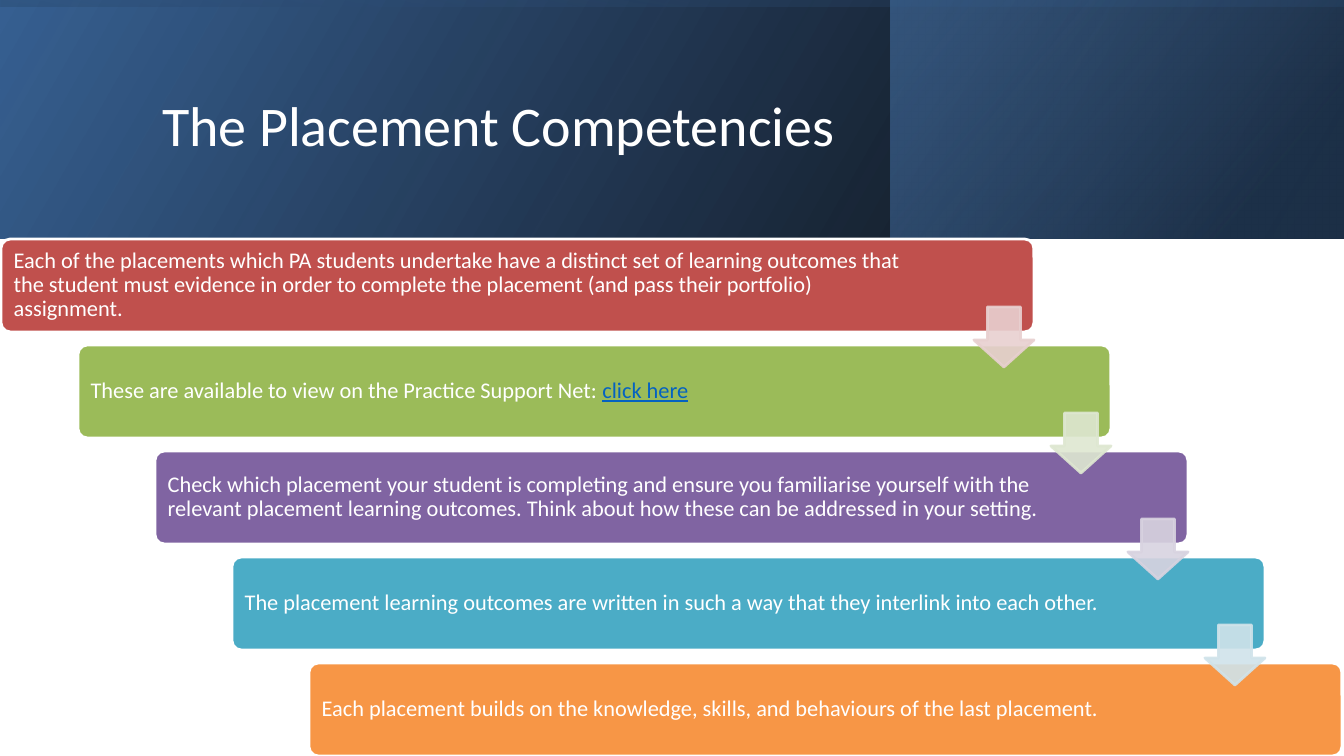
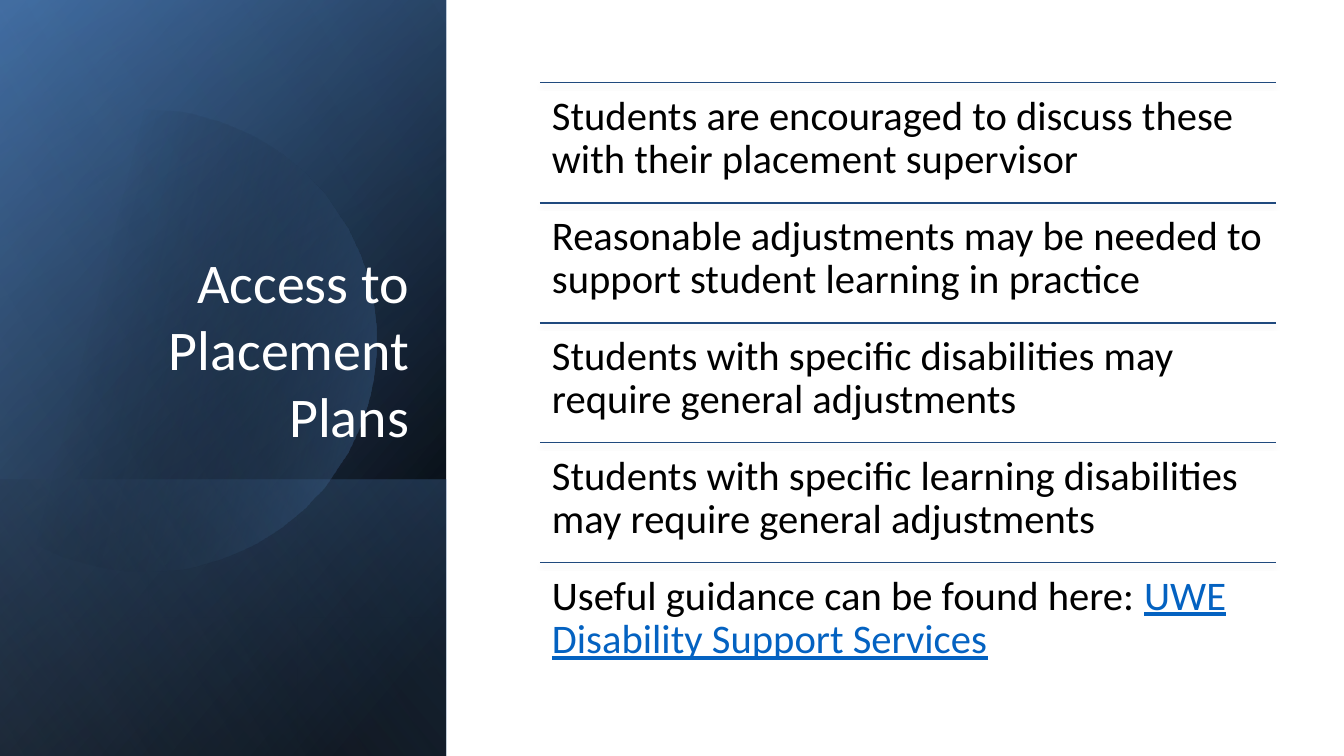
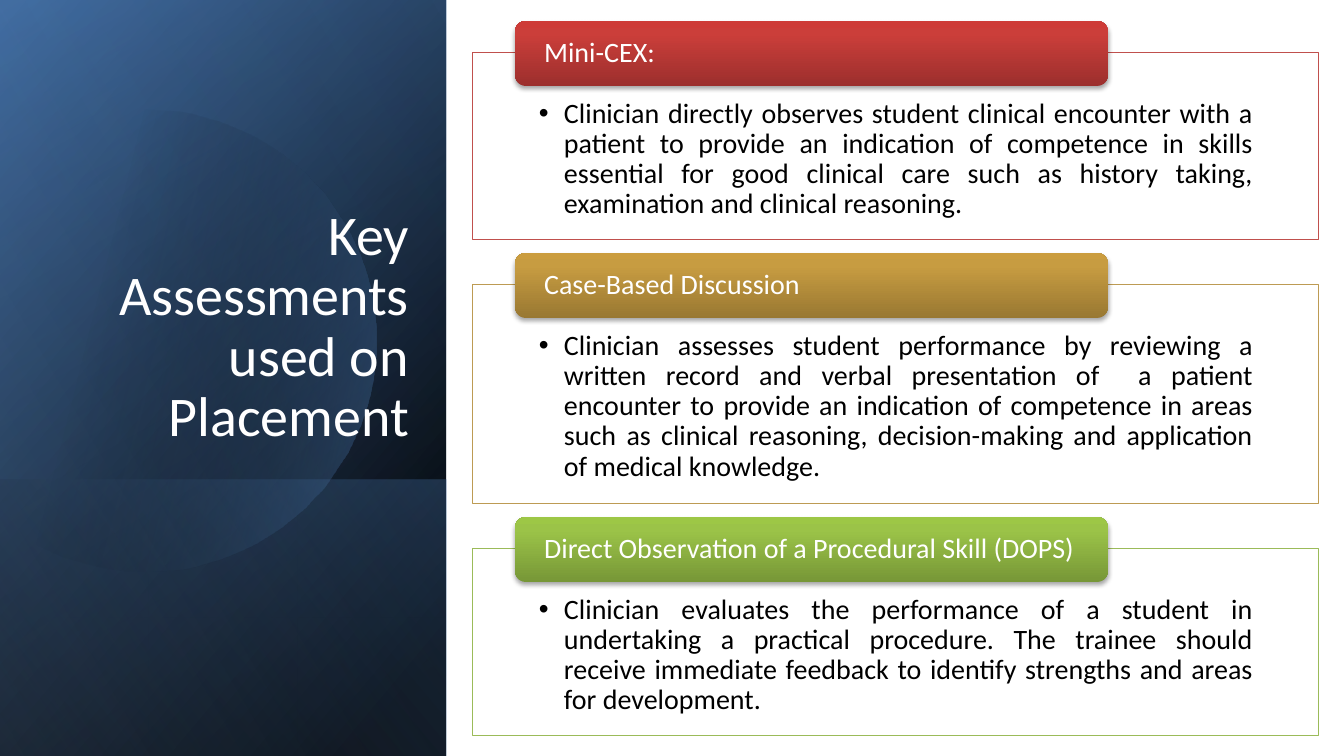
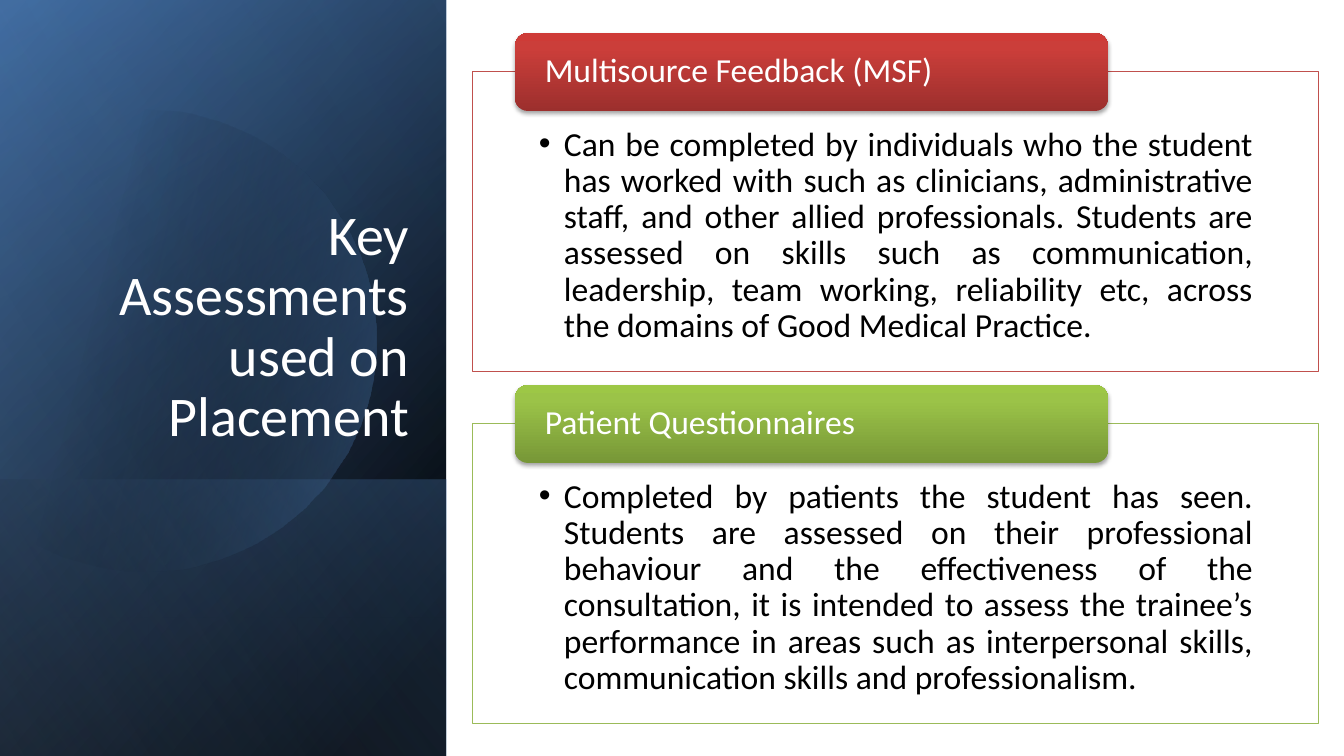
from math import acos, cos, pi, sin

from lxml.etree import SubElement
from pptx import Presentation
from pptx.dml.color import RGBColor
from pptx.enum.shapes import MSO_CONNECTOR, MSO_SHAPE as SHAPE
from pptx.enum.text import MSO_ANCHOR as ANCHOR, MSO_AUTO_SIZE, PP_ALIGN as ALIGN
from pptx.oxml import parse_xml
from pptx.oxml.ns import nsdecls, qn
from pptx.util import Pt

PX = 914400 / 100.8
WIDTH, HEIGHT = 1344, 756
BANNER_HEIGHT = 239
SIDE_WIDTH = 446
FONT = "Calibri"
COLOURS = {
    "white": "FFFFFF", "black": "000000", "navy": "254061", "deep": "376092",
    "blue": "4F81BD", "pale": "95B3D7", "rule": "1F497D", "link": "0462C1",
    "red": "C0504D", "green": "9BBB59", "purple": "8064A2", "teal": "4BACC6",
    "orange": "F79646", "gold": "BD9B53",
    "red tint": "E8D0D0", "green tint": "DEE7D1",
    "purple tint": "D8D3E0", "teal tint": "D0E3EA",
    "red low": "9C2F2D", "red mid": "CB3E3A", "red high": "CE3B37",
    "gold low": "997832", "gold mid": "C79C41", "gold high": "CB9D3F",
    "green low": "779737", "green mid": "9BC348", "green high": "9DC746",
}


def px(length):
    return round(length * PX)


def rgb(name):
    return RGBColor.from_string(COLOURS[name])


class Deck:
    """Holds the shared style and the slide being built."""

    def __init__(self):
        self.prs = Presentation()
        self.prs.slide_width, self.prs.slide_height = px(WIDTH), px(HEIGHT)
        self.slide = None

    def new_slide(self):
        self.slide = self.prs.slides.add_slide(self.prs.slide_layouts[5])

    def title(self, wording, box, anchor, align, margin=None, spacing=1.0):
        title = self.slide.shapes.title
        self.slide.shapes.element.append(title.element)  # in front of the panels
        title.left, title.top, title.width, title.height = map(px, box)
        title.text_frame.auto_size = MSO_AUTO_SIZE.NONE
        self.text(title, [(wording, "white")], 40, margin, anchor, align, spacing)

    def text(self, holder, parts, size, margins=None, anchor=ANCHOR.MIDDLE,
             align=ALIGN.LEFT, spacing=0.9, bullet=False):
        """Write one paragraph of (wording, colour) parts; margins run left, top, right, bottom."""
        frame = holder.text_frame
        frame.word_wrap, frame.vertical_anchor = True, anchor
        if margins:
            (frame.margin_left, frame.margin_top,
             frame.margin_right, frame.margin_bottom) = map(px, margins)
        paragraph = frame.paragraphs[0]
        paragraph.alignment, paragraph.line_spacing = align, spacing
        if bullet:
            props = paragraph._p.get_or_add_pPr()
            props.set("marL", str(px(25)))
            props.set("indent", str(-px(25)))
            SubElement(props, qn("a:buFont"), typeface="Arial")
            SubElement(props, qn("a:buChar"), char="•")
        for wording, colour in parts:
            run = paragraph.add_run()
            run.text = wording
            run.font.name, run.font.size = FONT, Pt(size)
            run.font.color.rgb = rgb(colour)
            if colour == "link":
                run.font.underline = True

    def shape(self, kind, box, fill=None, line=None, weight=0.75, opacity=100, adjust=()):
        shape = self.slide.shapes.add_shape(kind, *map(px, box))
        shape.shadow.inherit = False
        for index, value in enumerate(adjust):
            shape.adjustments[index] = value
        if fill:
            shape.fill.solid()
            shape.fill.fore_color.rgb = rgb(fill)
            colour = shape.element.spPr.find(qn("a:solidFill")).find(qn("a:srgbClr"))
            SubElement(colour, qn("a:alpha"), val=str(opacity * 1000))
        if line:
            shape.line.color.rgb = rgb(line)
            shape.line.width = Pt(weight)
        else:
            shape.line.fill.background()
        return shape

    def gradient(self, shape, angle, stops):
        """Fill with (position, colour, opacity) stops, all in percent."""
        marks = "".join(
            f'<a:gs pos="{place * 1000}"><a:srgbClr val="{COLOURS[colour]}">'
            f'<a:alpha val="{opacity * 1000}"/></a:srgbClr></a:gs>'
            for place, colour, opacity in stops)
        shape.fill.background()
        props = shape.element.spPr
        props.replace(props.find(qn("a:noFill")), parse_xml(
            f'<a:gradFill {nsdecls("a")} rotWithShape="1"><a:gsLst>{marks}</a:gsLst>'
            f'<a:lin ang="{angle * 60000}" scaled="0"/></a:gradFill>'))

    def drop_shadow(self, item):
        props = item.element.spPr
        effects = props.find(qn("a:effectLst"))
        if effects is None:
            effects = SubElement(props, qn("a:effectLst"))
        shadow = SubElement(effects, qn("a:outerShdw"), blurRad=str(Pt(3.1)),
                            dist=str(Pt(1.8)), dir="5400000", rotWithShape="0")
        black = SubElement(shadow, qn("a:srgbClr"), val=COLOURS["black"])
        SubElement(black, qn("a:alpha"), val="35000")

    def panel(self, box, turn, angle, *stops):
        """Mirrored gradient panel that covers box once it has been turned."""
        left, top, width, height = box
        if turn:
            left, top = left + (width - height) / 2, top + (height - width) / 2
            width, height = height, width
        panel = self.shape(SHAPE.RECTANGLE, (left, top, width, height))
        panel.rotation = turn
        panel.element.spPr.find(qn("a:xfrm")).set("flipH", "1")
        self.gradient(panel, angle, stops)

    def disc(self, centre_x, centre_y, radius):
        """Circle cut off at the left edge of the slide."""
        reach = acos(-centre_x / radius)
        steps = 72
        angles = [reach * (2 * step / steps - 1) for step in range(steps + 1)]
        points = [(round(centre_x + radius * cos(a)), round(centre_y + radius * sin(a)))
                  for a in angles]
        outline = self.slide.shapes.build_freeform(*points[0], scale=PX)
        outline.add_line_segments(points[1:], close=True)
        disc = outline.convert_to_shape()
        disc.shadow.inherit = False
        disc.line.fill.background()
        self.gradient(disc, 14, [(29, "black", 0), (100, "blue", 43)])

    def banner_slide(self, wording):
        self.new_slide()
        full = (0, 0, WIDTH, BANNER_HEIGHT)
        self.panel(full, 0, 330, (0, "black", 96), (100, "deep", 100))
        self.panel((891, 0, 452, BANNER_HEIGHT), 0, 320, (19, "navy", 68), (100, "blue", 48))
        self.panel(full, 270, 350, (23, "deep", 16), (99, "black", 45))
        self.title(wording, (152, 38, 1072, 173), ANCHOR.MIDDLE, ALIGN.LEFT)

    def side_slide(self, wording, spacing=0.9):
        self.new_slide()
        full = (0, 0, SIDE_WIDTH, HEIGHT)
        self.panel(full, 90, 50, (8, "black", 100), (100, "deep", 100))
        self.panel(full, 90, 30, (0, "black", 0), (99, "blue", 46))
        self.panel((0, 480, SIDE_WIDTH, 276), 90, 130, (2, "blue", 29), (100, "black", 30))
        self.disc(145, 341, 231)
        self.panel(full, 90, 120, (0, "black", 0), (99, "pale", 11))
        self.title(wording, (65, 185, 344, 264), ANCHOR.BOTTOM, ALIGN.RIGHT,
                   (0, 0, 0, 0), spacing)

    def staircase(self, steps):
        """Bars that step down to the right, with an arrow from each to the next."""
        right, down = 77, 106
        for index, (colour, parts) in enumerate(steps):
            bar = self.shape(SHAPE.ROUNDED_RECTANGLE,
                             (1 + index * right, 239 + index * down, 1033, 93),
                             colour, "white", 2, adjust=[0.1])
            self.text(bar, parts, 16, (10, 7, 120, 7))
        for index, (colour, _) in enumerate(steps[:-1]):
            tint = f"{colour} tint"
            arrow = self.shape(SHAPE.DOWN_ARROW,
                               (974 + index * right, 307 + index * down, 60, 60),
                               tint, tint, 2, 90, [0.55, 0.45])
            edge = arrow.line.fill.fore_color  # solid line colour, made see-through below
            edge.rgb = rgb(tint)
            outline = arrow.element.spPr.find(qn("a:ln"))
            SubElement(next(outline.iter(qn("a:srgbClr"))), qn("a:alpha"), val="90000")

    def ruled_list(self, rows):
        left, width, pitch = 540, 736, 120
        for index, parts in enumerate(rows):
            top = 83 + index * pitch
            rule = self.slide.shapes.add_connector(
                MSO_CONNECTOR.STRAIGHT, *map(px, (left, top, left + width, top)))
            rule.line.color.rgb = rgb("rule")
            rule.line.width = Pt(0.75)
            self.drop_shadow(rule)
            row = self.slide.shapes.add_textbox(*map(px, (left, top, width, pitch)))
            self.text(row, parts, 29, (12, 12, 12, 12), ANCHOR.TOP)

    def cards(self, top, gap, tab_height, size, entries):
        """Stack of outlined cards, each with a heading tab centred on its top edge."""
        for colour, tone, height, heading, body in entries:
            card = self.shape(SHAPE.RECTANGLE, (473, top, 846, height),
                              "white", colour, opacity=90)
            self.text(card, [(body, "black")], size, (66, round(tab_height * 0.71), 66, 16),
                      ANCHOR.TOP, ALIGN.JUSTIFY, bullet=True)
            tab = self.shape(SHAPE.ROUNDED_RECTANGLE,
                             (515, top - tab_height // 2, 593, tab_height))
            self.gradient(tab, 270, [(0, f"{tone} low", 100), (80, f"{tone} mid", 100),
                                     (100, f"{tone} high", 100)])
            self.drop_shadow(tab)
            self.text(tab, [(heading, "white")], size, (26, 0, 26, 0))
            top += height + gap


def main():
    deck = Deck()

    deck.banner_slide("The Placement Competencies")
    deck.staircase([
        ("red", [("Each of the placements which PA students undertake have a distinct set of "
                  "learning outcomes that the student must evidence in order to complete the "
                  "placement (and pass their portfolio) assignment.", "white")]),
        ("green", [("These are available to view on the Practice Support Net: ", "white"),
                   ("click here", "link")]),
        ("purple", [("Check which placement your student is completing and ensure you "
                     "familiarise yourself with the relevant placement learning outcomes. "
                     "Think about how these can be addressed in your setting.", "white")]),
        ("teal", [("The placement learning outcomes are written in such a way that they "
                   "interlink into each other.", "white")]),
        ("orange", [("Each placement builds on the knowledge, skills, and behaviours of the "
                     "last placement.", "white")]),
    ])

    deck.side_slide("Access to Placement Plans", spacing=1.0)
    deck.ruled_list([
        [("Students are encouraged to discuss these with their placement supervisor", "black")],
        [("Reasonable adjustments may be needed to support student learning in practice",
          "black")],
        [("Students with specific disabilities may require general adjustments", "black")],
        [("Students with specific learning disabilities may require general adjustments",
          "black")],
        [("Useful guidance can be found here: ", "black"),
         ("UWE Disability Support Services", "link")],
    ])

    assessments = "Key Assessments used on Placement"
    deck.side_slide(assessments)
    deck.cards(53, 45, 65, 20, [
        ("red", "red", 187, "Mini-CEX:",
         "Clinician directly observes student clinical encounter with a patient to provide an "
         "indication of competence in skills essential for good clinical care such as history "
         "taking, examination and clinical reasoning."),
        ("gold", "gold", 219, "Case-Based Discussion",
         "Clinician assesses student performance by reviewing a written record and verbal "
         "presentation of  a patient encounter to provide an indication of competence in areas "
         "such as clinical reasoning, decision-making and application of medical knowledge."),
        ("green", "green", 187, "Direct Observation of a Procedural Skill (DOPS)",
         "Clinician evaluates the performance of a student in undertaking a practical "
         "procedure. The trainee should receive immediate feedback to identify strengths and "
         "areas for development."),
    ])

    deck.side_slide(assessments)
    deck.cards(72, 52, 78, 24, [
        ("red", "red", 300, "Multisource Feedback (MSF)",
         "Can be completed by individuals who the student has worked with such as clinicians, "
         "administrative staff, and other allied professionals. Students are assessed on skills "
         "such as communication, leadership, team working, reliability etc, across the domains "
         "of Good Medical Practice."),
        ("green", "green", 300, "Patient Questionnaires",
         "Completed by patients the student has seen. Students are assessed on their "
         "professional behaviour and the effectiveness of the consultation, it is intended to "
         "assess the trainee’s performance in areas such as interpersonal skills, "
         "communication skills and professionalism."),
    ])

    deck.prs.save("out.pptx")


if __name__ == "__main__":
    main()
